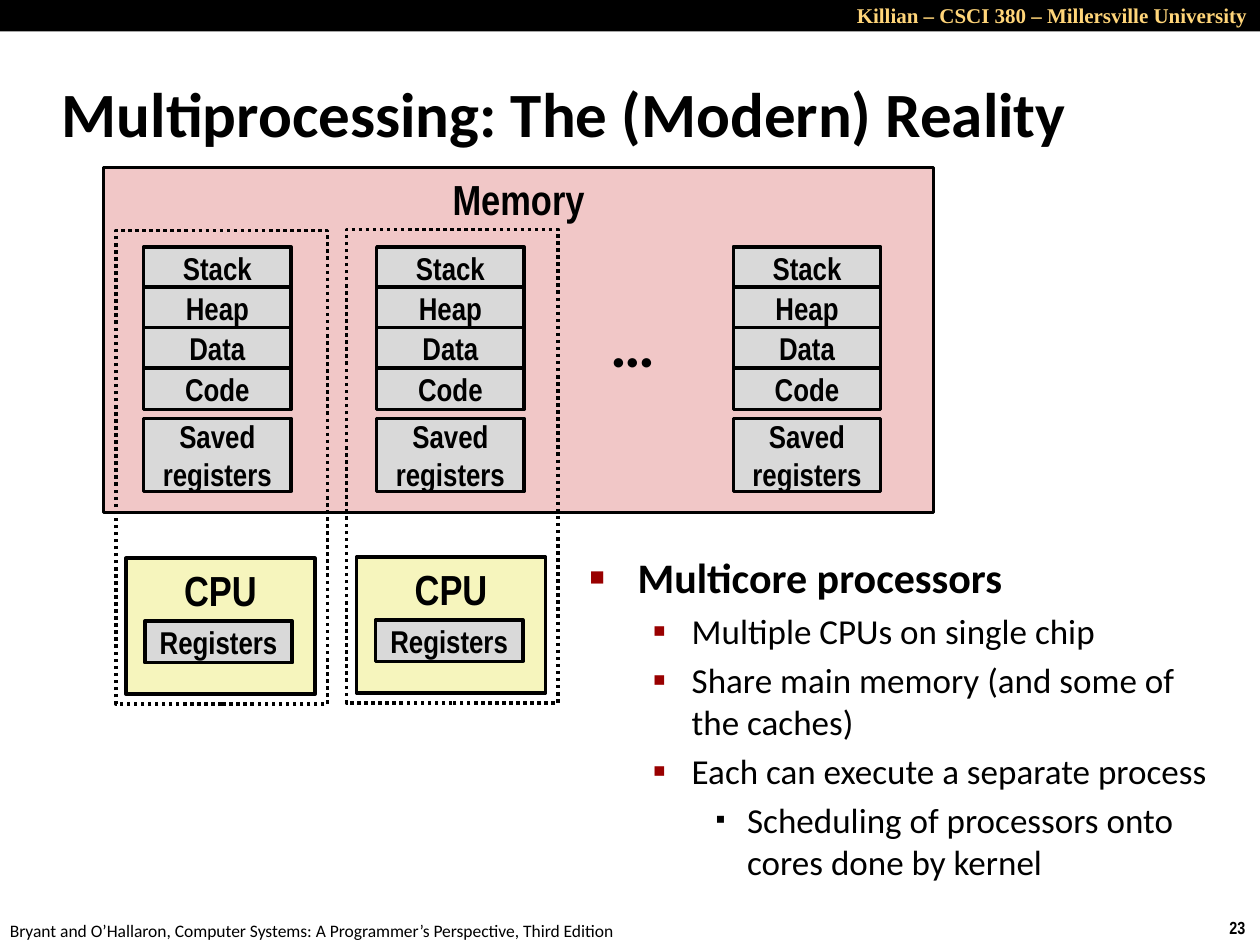
from lxml.etree import SubElement
from pptx import Presentation
from pptx.dml.color import RGBColor
from pptx.enum.dml import MSO_LINE
from pptx.enum.shapes import MSO_SHAPE
from pptx.enum.text import MSO_ANCHOR, MSO_AUTO_SIZE, PP_ALIGN
from pptx.oxml.ns import qn
from pptx.util import Inches, Pt


def write(shape, text, size, font="Arial Narrow", bold=True, color="000000",
          align=PP_ALIGN.LEFT, anchor=MSO_ANCHOR.TOP, wrap=True):
    """Fill the text frame, one paragraph per line, and format it."""
    frame = shape.text_frame
    frame.text = text
    frame_format = {"auto_size": MSO_AUTO_SIZE.NONE, "word_wrap": wrap,
                    "vertical_anchor": anchor}
    for name, value in frame_format.items():
        setattr(frame, name, value)
    for paragraph in frame.paragraphs:
        paragraph.alignment = align
        for run in paragraph.runs:
            run.font.color.rgb = RGBColor.from_string(color)
            for name, value in {"name": font, "size": Pt(size), "bold": bold}.items():
                setattr(run.font, name, value)


def add_box(left, top, width, height, fill=None, line="000000"):
    """Add a plain rectangle; without a fill its outline is dotted."""
    shape = slide.shapes.add_shape(MSO_SHAPE.RECTANGLE, Inches(left), Inches(top),
                                   Inches(width), Inches(height))
    shape.shadow.inherit = False
    if fill:
        shape.fill.solid()
        shape.fill.fore_color.rgb = RGBColor.from_string(fill)
    else:
        shape.fill.background()
    if line:
        shape.line.color.rgb = RGBColor.from_string(line)
        shape.line.width = Pt(2)
        if not fill:
            shape.line.dash_style = MSO_LINE.ROUND_DOT
    else:
        shape.line.fill.background()
    return shape


presentation = Presentation()
presentation.slide_width = Inches(10)
presentation.slide_height = Inches(7.5)
slide = presentation.slides.add_slide(presentation.slide_layouts[1])

GRAY, PINK, YELLOW, RED = "D9D9D9", "F1C7C7", "F6F5BD", "990000"
centered = {"align": PP_ALIGN.CENTER}
middle = {"align": PP_ALIGN.CENTER, "anchor": MSO_ANCHOR.MIDDLE}

# Header bar
add_box(0, 0, 10, 0.25, "000000", line=None)

# Title and body placeholders
title, body = slide.shapes.title, slide.placeholders[1]
for placeholder, (left, top, width, height) in (
        (title, (0.39, 0.48, 9.28, 0.83)), (body, (4.58, 4.33, 5.17, 2.92))):
    placeholder.left, placeholder.top = Inches(left), Inches(top)
    placeholder.width, placeholder.height = Inches(width), Inches(height)
write(title, "Multiprocessing: The (Modern) Reality", 36, "Calibri",
      anchor=MSO_ANCHOR.MIDDLE)

# Bulleted list: level of each line, then the format of each level
points = [
    (0, "Multicore processors"),
    (1, "Multiple CPUs on single chip"),
    (1, "Share main memory (and some of the caches)"),
    (1, "Each can execute a separate process"),
    (2, "Scheduling of processors onto cores done by kernel"),
]
bullets = [  # margin, hanging indent, character, size in percent, colour
    (0.38, 0.38, "■", 60, RED),
    (0.81, 0.31, "▪", 110, RED),
    (1.25, 0.25, "▪", 80, "000000"),
]
write(body, "\n".join(text for level, text in points), 20, "Calibri", bold=False)
for paragraph, (level, text) in zip(body.text_frame.paragraphs, points):
    margin, hanging, character, percent, color = bullets[level]
    paragraph.level = level
    properties = paragraph._p.get_or_add_pPr()
    properties.set("marL", str(Inches(margin)))
    properties.set("indent", str(-Inches(hanging)))
    bullet_color = SubElement(properties, qn("a:buClr"))
    SubElement(bullet_color, qn("a:srgbClr"), val=color)
    SubElement(properties, qn("a:buSzPct"), val=str(percent * 1000))
    SubElement(properties, qn("a:buChar"), char=character)
heading = body.text_frame.paragraphs[0].runs[0]
heading.font.size, heading.font.bold = Pt(24), True

# Memory
write(add_box(0.82, 1.33, 6.59, 2.74, PINK), "Memory", 24, **centered)

# Process images in memory
for left in (1.14, 2.99, 5.82):
    for row, segment in enumerate(("Stack", "Heap", "Data", "Code")):
        write(add_box(left, 1.96 + 0.32 * row, 1.17, 0.33, GRAY), segment, 18, **middle)
    write(add_box(left, 3.32, 1.17, 0.58, GRAY), "Saved registers", 18, **middle)

# CPUs, each in a dotted frame with its process
for left, top in ((0.92, 1.83), (2.75, 1.82)):
    write(add_box(left + 0.08, top + 2.6, 1.5, 1.08, YELLOW), "CPU", 24, **centered)
    write(add_box(left + 0.23, top + 3.1, 1.17, 0.33, GRAY), "Registers", 18, **middle)
    add_box(left, top, 1.68, 3.76)

# Ellipsis, course name, page number and source
labels = [
    ((4.75, 2.37, 0.56, 0.71), "…", 36, {"font": "Calibri", "wrap": False}),
    ((5.83, -0.03, 4.17, 0.3), "Killian – CSCI 380 – Millersville University", 12,
     {"font": "Times New Roman", "color": "FFD579", "align": PP_ALIGN.RIGHT}),
    ((9.66, 7.23, 0.34, 0.27), "23", 10, {"wrap": False}),
    ((-0.02, 7.25, 5.08, 0.27),
     "Bryant and O’Hallaron, Computer Systems: A Programmer’s Perspective, Third Edition",
     10, {"font": "Calibri", "bold": False, "wrap": False}),
]
for position, text, size, text_format in labels:
    label = slide.shapes.add_textbox(*(Inches(length) for length in position))
    write(label, text, size, **text_format)

presentation.save("out.pptx")
